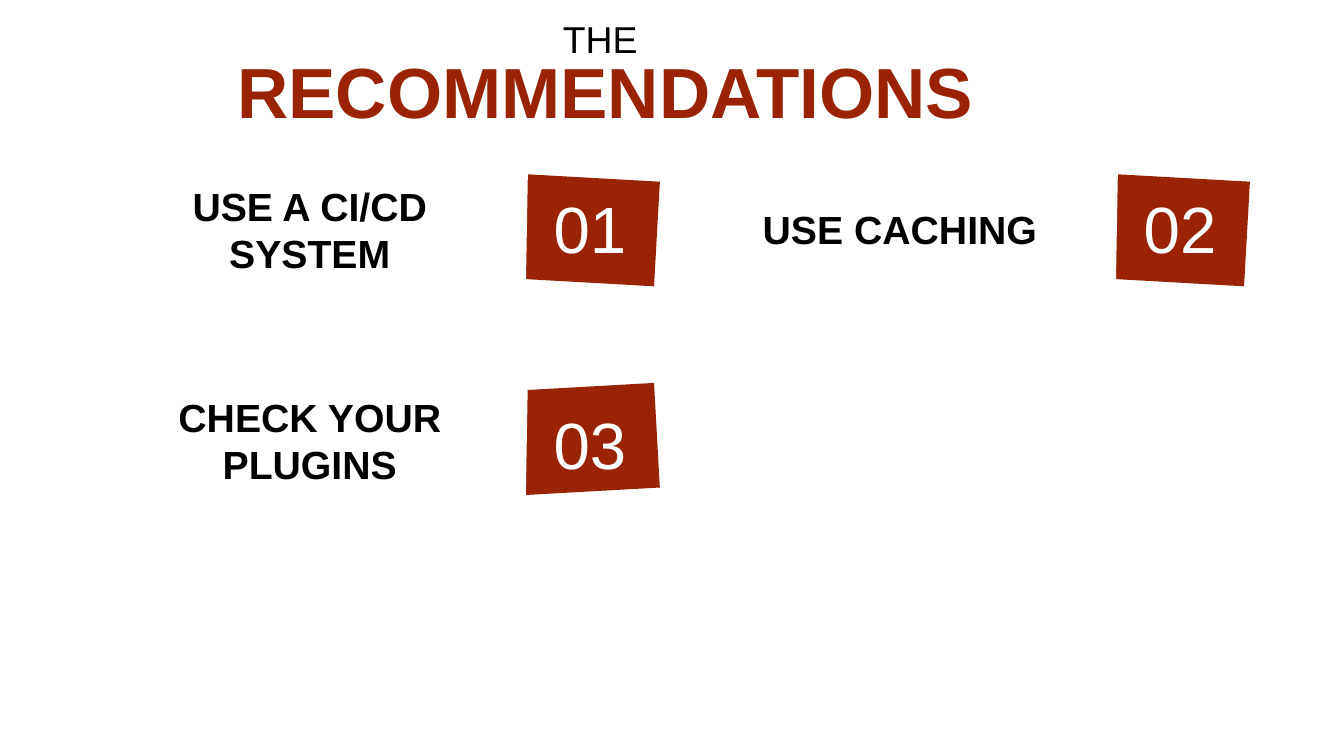
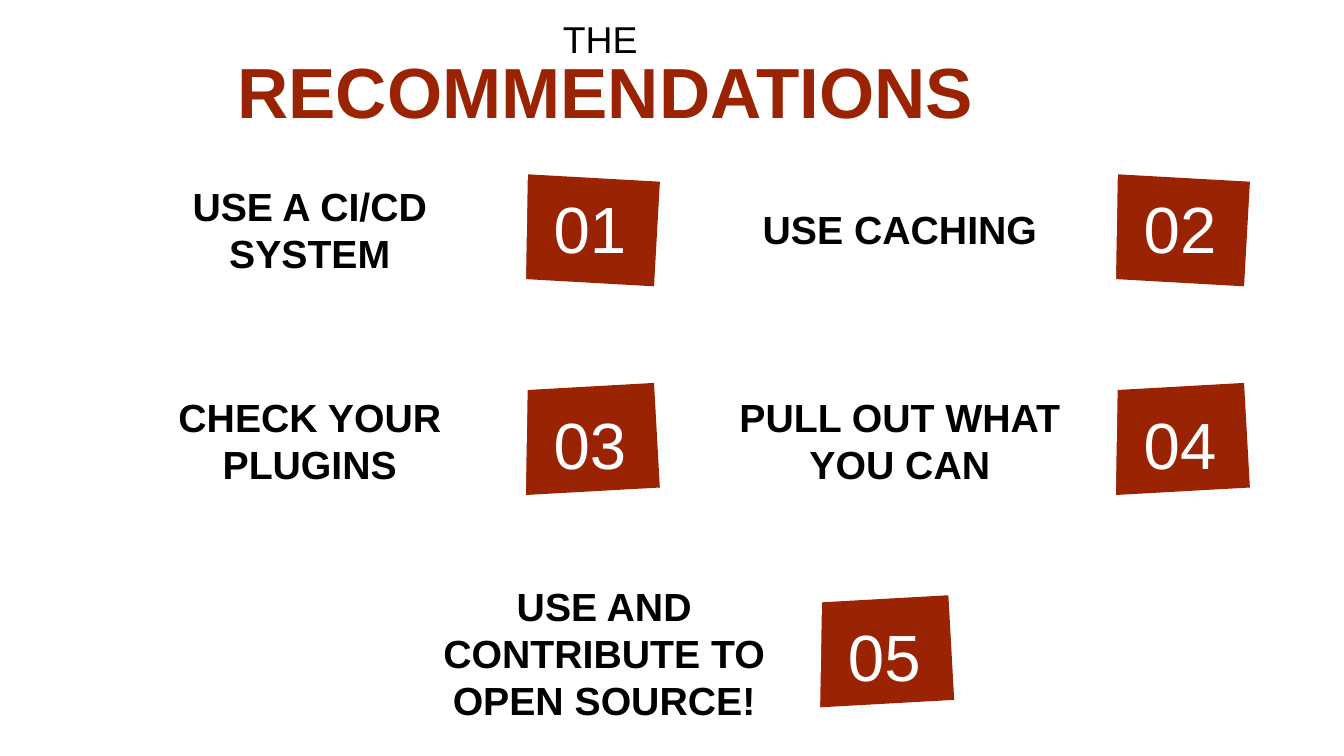
from pptx import Presentation
from pptx.dml.color import RGBColor
from pptx.enum import shapes, text
from pptx.util import Inches, Pt

RUST = RGBColor(0x99, 0x23, 0x02)
BLACK = RGBColor(0, 0, 0)
WHITE = RGBColor(255, 255, 255)
FONT = "Arial"
TITLE_ONLY = 5

# Card grid: left edges of the columns, top edges of the rows
LEFT, RIGHT, MIDDLE = 0.71, 5.1, 2.9
ROW_1, ROW_2, ROW_3 = 0.99, 2.59, 4.17

# number, label, card left, card top, tilt direction
RECOMMENDATIONS = [
    ("01", "USE A CI/CD SYSTEM", LEFT, ROW_1, 1),
    ("02", "USE CACHING", RIGHT, ROW_1, 1),
    ("03", "CHECK YOUR PLUGINS", LEFT, ROW_2, -1),
    ("04", "PULL OUT WHAT YOU CAN", RIGHT, ROW_2, -1),
    ("05", "USE AND CONTRIBUTE TO OPEN SOURCE!", MIDDLE, ROW_3, -1),
]


def add_run(paragraph, words, size, color, bold=False):
    run = paragraph.add_run()
    run.text = words
    run.font.name = FONT
    run.font.size = Pt(size)
    run.font.bold = bold
    run.font.color.rgb = color


def set_frame(frame, anchor):
    frame.word_wrap = True
    frame.auto_size = text.MSO_AUTO_SIZE.NONE
    frame.vertical_anchor = anchor
    frame.margin_left = frame.margin_right = Inches(0.1)
    frame.margin_top = frame.margin_bottom = Inches(0.1)
    paragraph = frame.paragraphs[0]
    paragraph.alignment = text.PP_ALIGN.CENTER
    return paragraph


def add_tilted(parent, left, top, width, height, angle, color):
    panel = parent.add_shape(shapes.MSO_SHAPE.RECTANGLE, Inches(left), Inches(top),
                             Inches(width), Inches(height))
    panel.rotation = angle
    panel.shadow.inherit = False
    panel.fill.solid()
    panel.fill.fore_color.rgb = color
    panel.line.fill.background()


def add_words(slide, left, top, width, height, words, size, color, bold=False):
    box = slide.shapes.add_textbox(Inches(left), Inches(top), Inches(width), Inches(height))
    paragraph = set_frame(box.text_frame, text.MSO_ANCHOR.MIDDLE)
    add_run(paragraph, words, size, color, bold)


def add_heading(slide):
    heading = slide.shapes.title
    heading.left, heading.top = Inches(0.86), Inches(0.07)
    heading.width, heading.height = Inches(7.29), Inches(0.97)
    paragraph = set_frame(heading.text_frame, text.MSO_ANCHOR.TOP)
    paragraph.line_spacing = 0.85
    add_run(paragraph, "THE ", 20, BLACK)
    paragraph.add_line_break()
    add_run(paragraph, "RECOMMENDATIONS", 38, RUST, bold=True)


def add_card(slide, number, label, left, top, tilt):
    falling = tilt > 0
    # Rust tab, partly hidden by two crossed white panels
    add_tilted(slide.shapes, left + 2.34, top + 0.31, 1.84, 0.78, 3.2 * tilt % 360, RUST)
    covers = slide.shapes.add_group_shape().shapes
    offsets = [(0, 0), (0.06, 0.07)] if falling else [(0.06, 0), (0, 0.07)]
    for (dx, dy), angle in zip(offsets, (-tilt, tilt)):
        add_tilted(covers, left + dx, top + dy, 3.15, 1.33, angle % 360, WHITE)
    # Label and number
    add_words(slide, left + 0.14, top + 0.2, 2.91, 1.03 if falling else 0.97,
              label, 21, BLACK, bold=True)
    add_words(slide, left + 3.19, top + 0.4, 0.98, 0.61, number, 35, WHITE)


def add_recommendations_slide(prs, count):
    slide = prs.slides.add_slide(prs.slide_layouts[TITLE_ONLY])
    add_heading(slide)
    for recommendation in RECOMMENDATIONS[:count]:
        add_card(slide, *recommendation)


def main():
    prs = Presentation()
    # Widescreen, 16:9
    prs.slide_width = Inches(10)
    prs.slide_height = Inches(10) * 9 // 16
    for count in (3, 5):
        add_recommendations_slide(prs, count)
    prs.save("out.pptx")


if __name__ == "__main__":
    main()
